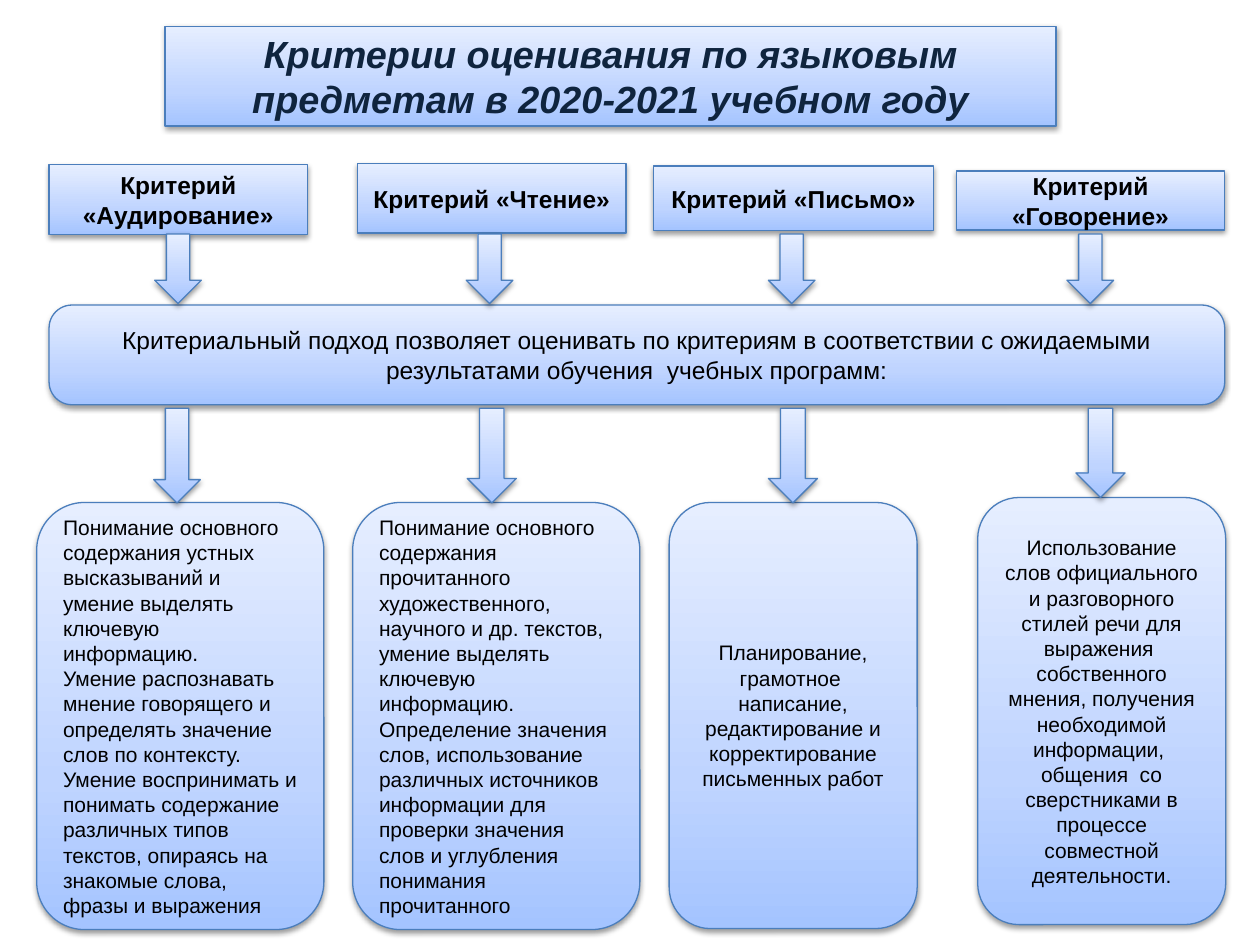
from copy import deepcopy
from dataclasses import dataclass

from lxml.etree import SubElement
from pptx import Presentation
from pptx.dml.color import RGBColor
from pptx.enum.shapes import MSO_SHAPE
from pptx.enum.text import MSO_ANCHOR, PP_ALIGN
from pptx.oxml.ns import qn
from pptx.util import Cm, Pt

GRADIENT = ((0, "A4C4FF"), (0.35, "BFD4FF"), (1, "E6EEFF"))
OUTLINE = "4B7EBC"
BLACK = "000000"


@dataclass(frozen=True)
class Area:
    left: float
    top: float
    width: float
    height: float


@dataclass(frozen=True)
class TextStyle:
    size: float
    color: str = BLACK
    bold: bool = False
    italic: bool = False
    alignment: PP_ALIGN = PP_ALIGN.CENTER


@dataclass(frozen=True)
class Criterion:
    name: str
    header: Area
    upper_arrow: Area
    lower_arrow: Area
    detail: Area
    descriptions: tuple[str, ...]
    alignment: PP_ALIGN = PP_ALIGN.CENTER


TITLE_STYLE = TextStyle(21.6, "0F243E", bold=True, italic=True)
HEADER_STYLE = TextStyle(14, bold=True)
APPROACH_STYLE = TextStyle(14)

CRITERIA = (
    Criterion(
        "Критерий «Аудирование»",
        Area(0.99, 3.32, 5.21, 1.41),
        Area(3.12, 4.72, 0.94, 1.4),
        Area(3.1, 8.23, 0.94, 1.91),
        Area(0.74, 10.13, 5.79, 8.61),
        (
            "Понимание основного содержания устных высказываний и умение выделять ключевую информацию.",
            "Умение распознавать мнение говорящего и определять значение слов по контексту.",
            "Умение воспринимать и понимать содержание различных типов текстов, опираясь на знакомые слова, фразы и выражения",
        ),
        PP_ALIGN.LEFT,
    ),
    Criterion(
        "Критерий «Чтение»",
        Area(7.21, 3.3, 5.41, 1.4),
        Area(9.4, 4.72, 0.94, 1.4),
        Area(9.42, 8.23, 0.99, 1.91),
        Area(7.11, 10.13, 5.79, 8.61),
        (
            "Понимание основного содержания прочитанного художественного, научного и др. текстов, умение выделять ключевую информацию.",
            "Определение значения слов, использование различных источников информации для проверки значения слов и углубления понимания прочитанного",
        ),
        PP_ALIGN.LEFT,
    ),
    Criterion(
        "Критерий «Письмо»",
        Area(13.18, 3.35, 5.64, 1.3),
        Area(15.49, 4.72, 0.94, 1.4),
        Area(15.49, 8.23, 0.99, 1.91),
        Area(13.49, 10.13, 5, 8.59),
        ("Планирование, грамотное  написание, редактирование и корректирование письменных работ",),
    ),
    Criterion(
        "Критерий «Говорение»",
        Area(19.28, 3.45, 5.41, 1.19),
        Area(21.51, 4.72, 0.94, 1.4),
        Area(21.69, 8.23, 0.99, 1.8),
        Area(19.71, 10.03, 5, 8.61),
        (
            "Использование слов официального и разговорного стилей речи для выражения  собственного мнения, получения необходимой информации,  общения  со сверстниками в процессе совместной деятельности.",
        ),
    ),
)


def rgb(value: str) -> RGBColor:
    return RGBColor.from_string(value)


def add_shadow(shape) -> None:
    shape.shadow.inherit = False
    effects = shape._element.spPr.find(qn("a:effectLst"))
    shadow = SubElement(
        effects, qn("a:outerShdw"),
        blurRad=str(Pt(3.1)), dist=str(Pt(1.6)), dir="5400000", rotWithShape="0",
    )
    color = SubElement(shadow, qn("a:srgbClr"), val=BLACK)
    SubElement(color, qn("a:alpha"), val="38000")


def add_gradient_shape(slide, kind: MSO_SHAPE, area: Area):
    shape = slide.shapes.add_shape(
        kind, Cm(area.left), Cm(area.top), Cm(area.width), Cm(area.height)
    )
    shape.fill.gradient()
    shape.fill.gradient_angle = 90
    stops = shape._element.spPr.find(qn("a:gradFill")).find(qn("a:gsLst"))
    stops.append(deepcopy(stops[0]))
    for stop, (position, color) in zip(shape.fill.gradient_stops, GRADIENT):
        stop.position = position
        stop.color.rgb = rgb(color)
    shape.line.color.rgb = rgb(OUTLINE)
    shape.line.width = Pt(0.75)
    add_shadow(shape)
    return shape


def add_text_shape(slide, kind: MSO_SHAPE, area: Area, texts: tuple[str, ...], style: TextStyle):
    shape = add_gradient_shape(slide, kind, area)
    frame = shape.text_frame
    frame.word_wrap = True
    frame.vertical_anchor = MSO_ANCHOR.MIDDLE
    for index, text in enumerate(texts):
        paragraph = frame.add_paragraph() if index else frame.paragraphs[0]
        paragraph.alignment = style.alignment
        run = paragraph.add_run()
        run.text = text
        run.font.name = "Arial"
        run.font.size = Pt(style.size)
        run.font.bold = style.bold
        run.font.italic = style.italic
        run.font.color.rgb = rgb(style.color)
    return shape


def main() -> None:
    presentation = Presentation()
    presentation.slide_width = Cm(25.4)
    presentation.slide_height = Cm(19.05)
    slide = presentation.slides.add_slide(presentation.slide_layouts[6])

    add_text_shape(
        slide, MSO_SHAPE.RECTANGLE, Area(3.33, 0.53, 17.96, 2.01),
        ("Критерии оценивания по языковым предметам в 2020-2021 учебном году",), TITLE_STYLE,
    )
    approach = add_text_shape(
        slide, MSO_SHAPE.ROUNDED_RECTANGLE, Area(0.99, 6.15, 23.7, 2.01),
        ("Критериальный подход позволяет оценивать по критериям в соответствии с ожидаемыми результатами обучения  учебных программ:",),
        APPROACH_STYLE,
    )
    approach.adjustments[0] = 0.23

    for criterion in CRITERIA:
        add_text_shape(
            slide, MSO_SHAPE.ROUNDED_RECTANGLE, criterion.detail,
            criterion.descriptions, TextStyle(12, alignment=criterion.alignment),
        )
        add_gradient_shape(slide, MSO_SHAPE.DOWN_ARROW, criterion.lower_arrow)
        add_text_shape(slide, MSO_SHAPE.RECTANGLE, criterion.header, (criterion.name,), HEADER_STYLE)
        add_gradient_shape(slide, MSO_SHAPE.DOWN_ARROW, criterion.upper_arrow)

    presentation.save("out.pptx")


if __name__ == "__main__":
    main()
